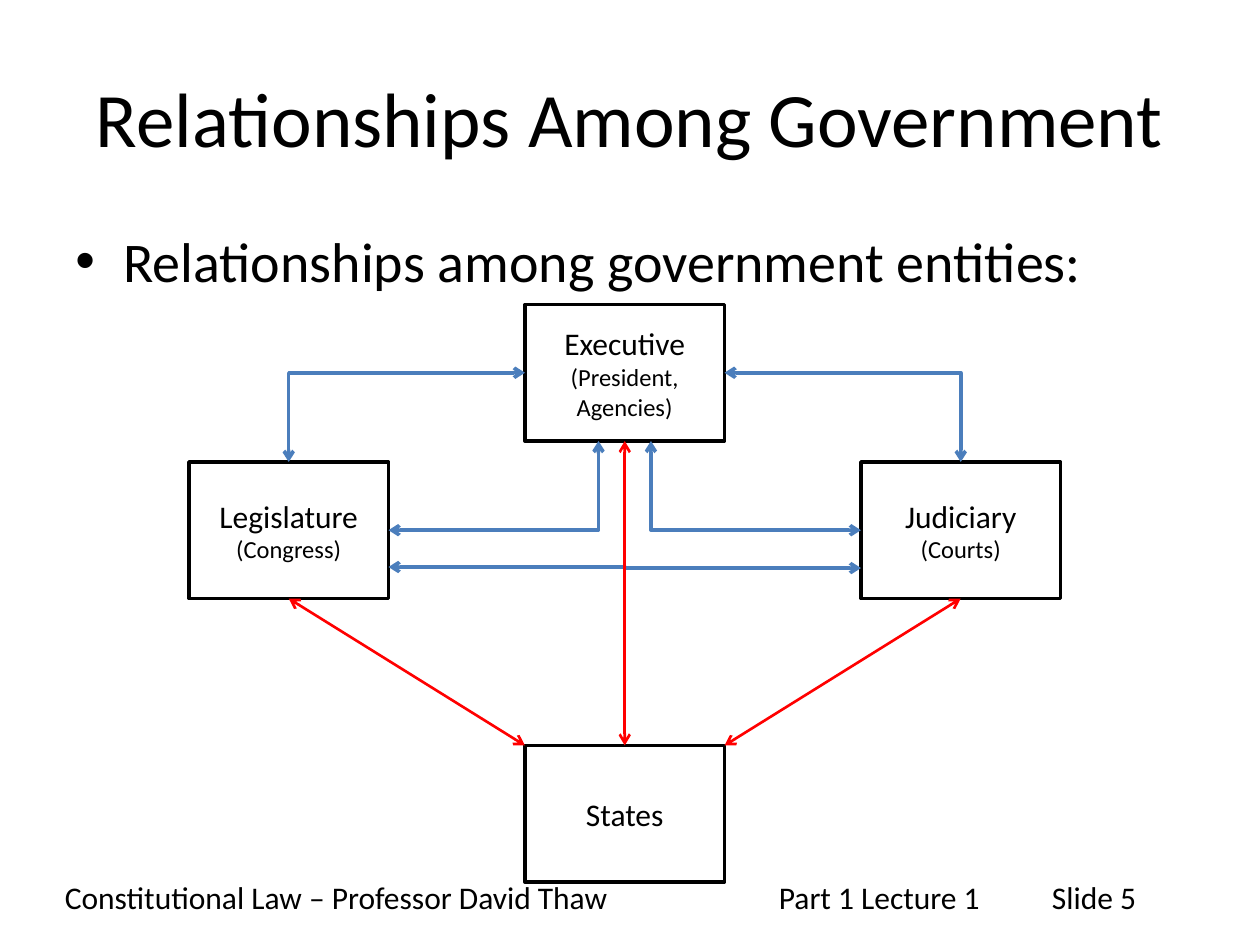
from pptx import Presentation
from pptx import util as u
from pptx.dml.color import RGBColor
from pptx.enum import shapes, text
from pptx.oxml.ns import qn
from lxml import etree

BLACK = RGBColor(0x00, 0x00, 0x00)
WHITE = RGBColor(0xFF, 0xFF, 0xFF)
BLUE = RGBColor(0x4B, 0x7E, 0xBC)
RED = RGBColor(0xFF, 0x00, 0x00)

BOX_WIDTH, BOX_HEIGHT = 19, 13
LEFT, MIDDLE, RIGHT = 18, 50, 82


class Diagram:
    """Slide on a grid of 120 columns by 90 rows, each cell 1/12 inch."""

    font = "Calibri"
    cell = u.Inches(1 / 12)

    def __init__(self, deck):
        self.page = deck.slides.add_slide(deck.slide_layouts[5])

    def grid(self, *counts):
        return [u.Emu(round(count * self.cell)) for count in counts]

    def set_lines(self, frame, lines, align=text.PP_ALIGN.LEFT,
                  anchor=text.MSO_ANCHOR.TOP, wrap=True):
        """Fill a frame with (wording, size) lines, one paragraph each."""
        for name, value in {"word_wrap": wrap, "vertical_anchor": anchor}.items():
            setattr(frame, name, value)
        for index, (wording, size) in enumerate(lines):
            para = frame.add_paragraph() if index else frame.paragraphs[0]
            para.alignment = align
            span = para.add_run()
            span.text = wording
            span.font.color.rgb = BLACK
            for name, value in {"name": self.font, "size": u.Pt(size)}.items():
                setattr(span.font, name, value)

    def title(self, wording, *area):
        holder = self.page.shapes.title
        for name, value in zip(("left", "top", "width", "height"), self.grid(*area)):
            setattr(holder, name, value)
        self.set_lines(holder.text_frame, [(wording, 44)], text.PP_ALIGN.CENTER,
                       text.MSO_ANCHOR.MIDDLE)

    def label(self, wording, size, *area, wrap=False):
        box = self.page.shapes.add_textbox(*self.grid(*area))
        self.set_lines(box.text_frame, [(wording, size)], wrap=wrap)
        return box

    def bullet(self, wording, size, *area):
        para = self.label(wording, size, *area, wrap=True).text_frame.paragraphs[0]
        para.space_before = u.Pt(0.2 * size)
        props = para._p.get_or_add_pPr()
        indent = u.Inches(0.38)
        props.set("marL", str(indent))
        props.set("indent", str(-indent))
        etree.SubElement(props, qn("a:buFont")).set("typeface", "Arial")
        etree.SubElement(props, qn("a:buChar")).set("char", "•")

    def branch(self, left, top, name, detail=None):
        box = self.page.shapes.add_shape(
            shapes.MSO_SHAPE.RECTANGLE, *self.grid(left, top, BOX_WIDTH, BOX_HEIGHT))
        box.shadow.inherit = False
        box.fill.solid()
        box.fill.fore_color.rgb = WHITE
        box.line.color.rgb = BLACK
        box.line.width = u.Pt(2)
        lines = [(name, 18)] + ([(detail, 14)] if detail else [])
        self.set_lines(box.text_frame, lines, text.PP_ALIGN.CENTER,
                       text.MSO_ANCHOR.MIDDLE)

    def arrow(self, start, end, color, width, preset="line"):
        """Double-headed connector; bentConnector2 runs across, then up or down."""
        link = self.page.shapes.add_connector(
            shapes.MSO_CONNECTOR.STRAIGHT, *self.grid(*start, *end))
        link.line.color.rgb = color
        link.line.width = u.Pt(width)
        props = link._element.spPr
        props.find(qn("a:prstGeom")).set("prst", preset)
        for tip in ("a:headEnd", "a:tailEnd"):
            etree.SubElement(props.find(qn("a:ln")), qn(tip)).set("type", "arrow")
        etree.SubElement(props, qn("a:effectLst"))


def main():
    deck = Presentation()
    deck.slide_width, deck.slide_height = u.Inches(10), u.Inches(7.5)
    page = Diagram(deck)

    for wording, left, width in (
            ("Constitutional Law – Professor David Thaw", 5, 54.7),
            ("Part 1 Lecture 1", 73, 21.8),
            ("Slide 5", 99, 12.6)):
        page.label(wording, 18, left, 83, width, 4.8)
    page.title("Relationships Among Government", 6, 3.6, 108, 15)
    page.bullet("Relationships among government entities:", 32, 6, 21, 108, 11)

    executive_top, side_top, states_top = 29, 44, 71
    page.branch(LEFT, side_top, "Legislature", "(Congress)")
    page.branch(MIDDLE, executive_top, "Executive", "(President, Agencies)")
    page.branch(RIGHT, side_top, "Judiciary", "(Courts)")
    page.branch(MIDDLE, states_top, "States")

    center = MIDDLE + BOX_WIDTH / 2
    executive_bottom = executive_top + BOX_HEIGHT
    executive_mid = executive_top + BOX_HEIGHT / 2
    side_bottom, side_mid = side_top + BOX_HEIGHT, side_top + BOX_HEIGHT / 2
    half, reach = BOX_WIDTH / 2, center - LEFT - BOX_WIDTH
    for side in (-1, 1):
        executive_edge = center + side * half
        branch_edge = center + side * reach
        branch_center = branch_edge + side * half
        page.arrow((executive_edge, executive_mid), (branch_center, side_top),
                   BLUE, 2, "bentConnector2")
        page.arrow((branch_edge, side_mid), (center + side * 2.5, executive_bottom),
                   BLUE, 2, "bentConnector2")
    page.arrow((center - reach, 54), (center + reach, 54.1), BLUE, 2, "bentConnector3")
    for side in (-1, 0, 1):
        start_row = side_bottom if side else executive_bottom
        page.arrow((center + side * (reach + half), start_row),
                   (center + side * half, states_top), RED, 1.5)

    deck.save("out.pptx")


if __name__ == "__main__":
    main()
